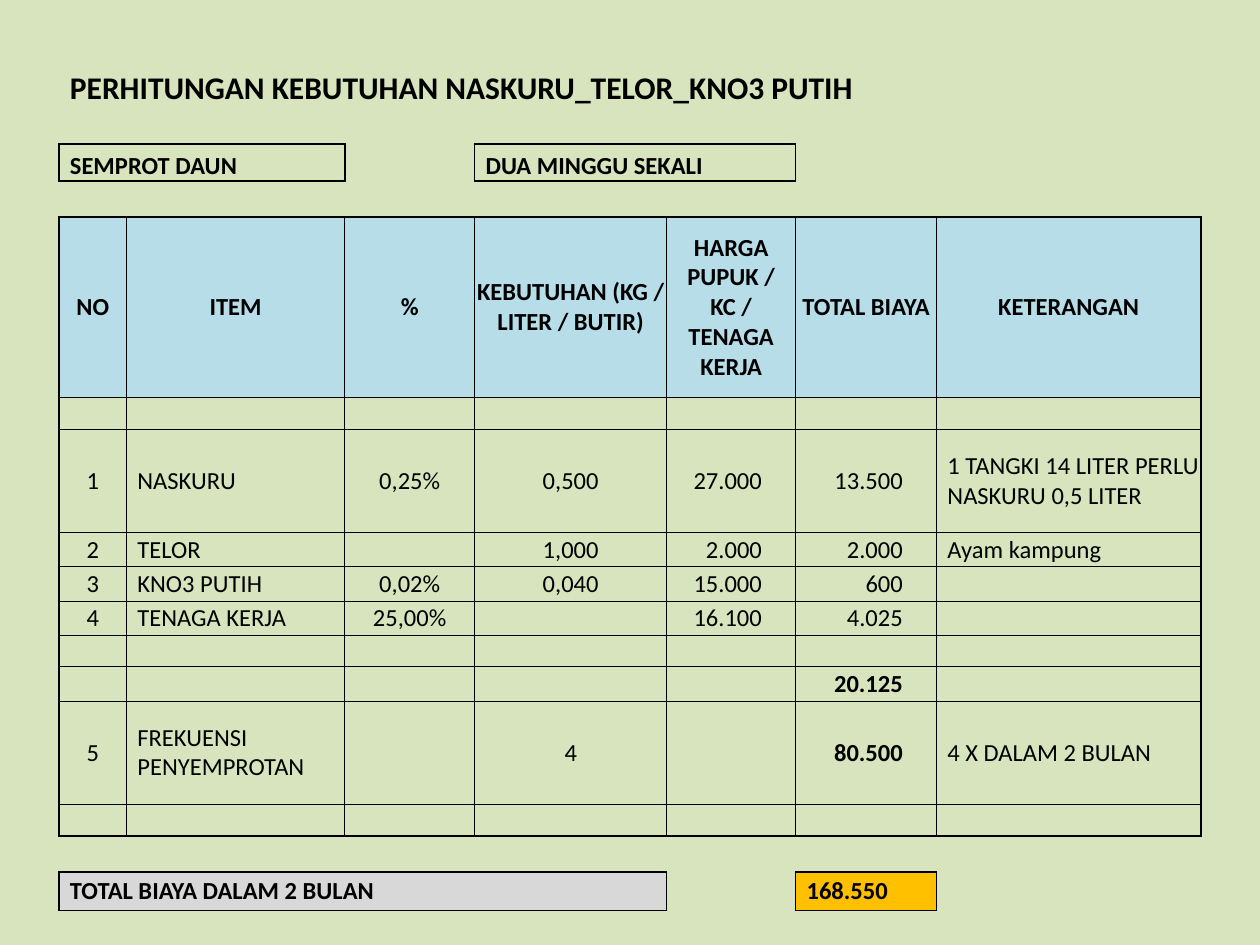
from dataclasses import dataclass
from lxml.etree import SubElement
from pptx import Presentation
from pptx.dml.color import RGBColor
from pptx.enum.text import MSO_ANCHOR as Anchor, PP_ALIGN as Align
from pptx.oxml.ns import qn
from pptx.util import Cm, Pt

FONT, INK = "Calibri", "000000"
PAGE, HEAD, GREY, GOLD = "D7E4BD", "B6DDE8", "D8D8D8", "FFC000"
THIN, THICK = 0.5, 1
INDENT, MONEY_INDENT = Cm(0.22), Cm(0.68)
NO_STYLE = "{2D5ABB26-0587-4C30-8999-92F81FD0307C}"

COLUMNS = [1.36, 4.4, 2.62, 3.87, 2.6, 2.84, 5.33]
ROWS = [0.77, 0.73, 0.74, 0.73, 3.64, 0.64, 2.08, 0.69, 0.69, 0.69,
        0.64, 0.69, 2.08, 0.64, 0.73, 0.77]
GRID_TOP, GRID_BOTTOM = 4, 13
ALIGNS = [Align.CENTER, Align.LEFT, Align.CENTER, Align.CENTER,
          Align.RIGHT, Align.RIGHT, Align.LEFT]
HEADINGS = ["NO", "ITEM", "%", "KEBUTUHAN (KG / LITER / BUTIR)",
            "HARGA PUPUK / KC / TENAGA KERJA", "TOTAL BIAYA", "KETERANGAN"]
COSTS = {
    6: ["1", "NASKURU", "0,25%", "0,500", "27.000", "13.500",
        "1 TANGKI 14 LITER PERLU\nNASKURU 0,5 LITER"],
    7: ["2", "TELOR", "", "1,000", "2.000", "2.000", "Ayam kampung"],
    8: ["3", "KNO3 PUTIH", "0,02%", "0,040", "15.000", "600", ""],
    9: ["4", "TENAGA KERJA", "25,00%", "", "16.100", "4.025", ""],
    11: ["", "", "", "", "", "20.125", ""],
    12: ["5", "FREKUENSI\nPENYEMPROTAN", "", "4", "", "80.500",
         "4 X DALAM 2 BULAN"],
}
SUM_ROWS = (11, 12)
TOTAL_COLUMN = 5


@dataclass
class Label:
    row: int
    first: int
    last: int
    text: str
    size: int = 14
    fill: str = ""
    framed: bool = True
    anchor: Anchor = Anchor.BOTTOM


LABELS = [
    Label(0, 0, 5, "PERHITUNGAN KEBUTUHAN NASKURU_TELOR_KNO3 PUTIH", 18, framed=False),
    Label(2, 0, 1, "SEMPROT DAUN"),
    Label(2, 3, 4, "DUA MINGGU SEKALI"),
    Label(15, 0, 3, "TOTAL BIAYA DALAM 2 BULAN", fill=GREY, anchor=Anchor.MIDDLE),
    Label(15, 5, 5, "168.550", fill=GOLD, anchor=Anchor.MIDDLE),
]


def color(value: str) -> RGBColor:
    return RGBColor.from_string(value)


def paint(cell, value: str) -> None:
    cell.fill.solid()
    cell.fill.fore_color.rgb = color(value)


def write(cell, text: str, align=Align.LEFT, bold=False, size=14,
          anchor=Anchor.MIDDLE) -> None:
    cell.vertical_anchor = anchor
    if align == Align.LEFT:
        cell.margin_left = INDENT
    elif align == Align.RIGHT:
        cell.margin_right = MONEY_INDENT
    for number, line in enumerate(text.split("\n")):
        frame = cell.text_frame
        para = frame.add_paragraph() if number else frame.paragraphs[0]
        para.alignment = align
        span = para.add_run()
        span.text = line
        span.font.name, span.font.size, span.font.bold = FONT, Pt(size), bold
        span.font.color.rgb = color(INK)


def frame_edges(edges: dict, top: int, left: int, bottom: int, right: int) -> None:
    """Record the thick outline around a block of cells."""
    for col in range(left, right + 1):
        edges["h", top, col] = edges["h", bottom + 1, col] = THICK
    for row in range(top, bottom + 1):
        edges["v", row, left] = edges["v", row, right + 1] = THICK


def plan_edges() -> dict:
    edges = {}
    for row in range(GRID_TOP, GRID_BOTTOM + 1):
        for col in range(len(COLUMNS)):
            edges["h", row, col] = edges["v", row, col] = THIN
    frame_edges(edges, GRID_TOP, 0, GRID_BOTTOM, len(COLUMNS) - 1)
    for label in LABELS:
        if label.framed:
            frame_edges(edges, label.row, label.first, label.row, label.last)
    return edges


def border(cell, row: int, col: int, edges: dict) -> None:
    sides = {"L": ("v", row, col), "R": ("v", row, col + cell.span_width),
             "T": ("h", row, col), "B": ("h", row + 1, col)}
    props = cell._tc.get_or_add_tcPr()
    for side, key in sides.items():
        width = edges.get(key, 0)
        line = SubElement(props, qn(f"a:ln{side}"), w=str(int(Pt(width))))
        if width:
            fill = SubElement(line, qn("a:solidFill"))
            SubElement(fill, qn("a:srgbClr"), val=INK)
        else:
            SubElement(line, qn("a:noFill"))


def add_grid(page):
    shape = page.shapes.add_table(len(ROWS), len(COLUMNS), Cm(1.19), Cm(1.4),
                                  Cm(sum(COLUMNS)), Cm(sum(ROWS)))
    table = shape.table
    table.first_row = table.horz_banding = False
    shape._element.find(".//" + qn("a:tableStyleId")).text = NO_STYLE
    for column, width in zip(table.columns, COLUMNS):
        column.width = Cm(width)
    for row, height in zip(table.rows, ROWS):
        row.height = Cm(height)
    for label in LABELS:
        if label.last > label.first:
            table.cell(label.row, label.first).merge(table.cell(label.row, label.last))
    edges = plan_edges()
    for row in range(len(ROWS)):
        for col in range(len(COLUMNS)):
            cell = table.cell(row, col)
            cell.margin_left = cell.margin_right = 0
            cell.margin_top = cell.margin_bottom = 0
            border(cell, row, col, edges)
            cell.fill.background()
    return table


def fill_grid(table) -> None:
    # Title, method boxes and grand total
    for label in LABELS:
        cell = table.cell(label.row, label.first)
        write(cell, label.text, bold=True, size=label.size, anchor=label.anchor)
        if label.fill:
            paint(cell, label.fill)
    # Column headings
    for col, heading in enumerate(HEADINGS):
        cell = table.cell(GRID_TOP, col)
        write(cell, heading, Align.CENTER, bold=True)
        paint(cell, HEAD)
    # Cost lines
    for row, values in COSTS.items():
        for col, value in enumerate(values):
            if value:
                bold = row in SUM_ROWS and col == TOTAL_COLUMN
                write(table.cell(row, col), value, ALIGNS[col], bold)
    # Small type in empty cells keeps the short rows short
    for cell in table.iter_cells():
        if not cell.text:
            SubElement(cell.text_frame.paragraphs[0]._p, qn("a:endParaRPr"), sz="1400")


def main() -> None:
    deck = Presentation()
    deck.slide_width, deck.slide_height = Cm(25.4), Cm(19.05)
    page = deck.slides.add_slide(deck.slide_layouts[6])
    page.background.fill.solid()
    page.background.fill.fore_color.rgb = color(PAGE)
    fill_grid(add_grid(page))
    deck.save("out.pptx")


if __name__ == "__main__":
    main()
